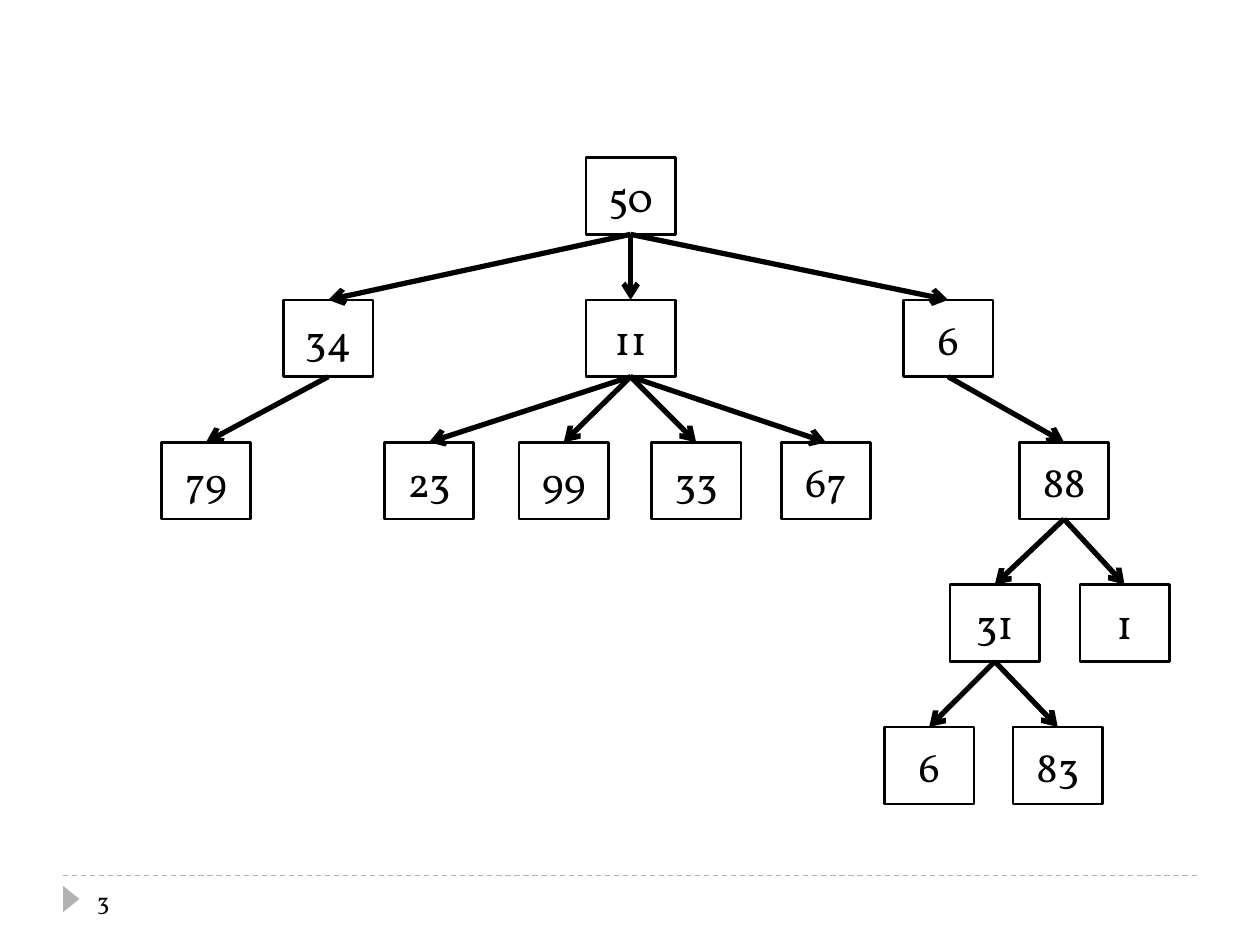
import pptx
import pptx.dml.color
import pptx.enum.dml
import pptx.enum.shapes
import pptx.enum.text
import pptx.oxml.ns
import pptx.util
import lxml.etree

Inches = pptx.util.Inches
SHAPE = pptx.enum.shapes.MSO_SHAPE
FONT = "Vollkorn"
BLACK, GREY = "000000", "B2B2B2"
WIDE, HIGH = 0.71, 0.61
TOP, STEP = 1.25, 1.13
BOTTOM_SITE, TOP_SITE = 2, 0

# Each node: label, left edge, children
TREE = ("50", 4.65, [
    ("34", 2.25, [("79", 1.28, [])]),
    ("11", 4.65, [
        ("23", 3.05, []),
        ("99", 4.12, []),
        ("33", 5.17, []),
        ("67", 6.2, []),
    ]),
    ("6", 7.17, [
        ("88", 8.09, [
            ("31", 7.54, [("6", 7.02, []), ("83", 8.04, [])]),
            ("1", 8.57, []),
        ]),
    ]),
])


def paint(color, code):
    color.rgb = pptx.dml.color.RGBColor.from_string(code)


def write(shape, text, size, align):
    frame = shape.text_frame
    frame.word_wrap = True
    frame.vertical_anchor = pptx.enum.text.MSO_ANCHOR.MIDDLE
    para = frame.paragraphs[0]
    para.alignment = align
    run = para.add_run()
    run.text = text
    run.font.name = FONT
    run.font.size = pptx.util.Pt(size)
    paint(run.font.color, BLACK)


def add_line(slide, start, end, code, width):
    line = slide.shapes.add_connector(
        pptx.enum.shapes.MSO_CONNECTOR.STRAIGHT,
        *(Inches(value) for value in start + end))
    paint(line.line.color, code)
    line.line.width = pptx.util.Pt(width)
    props = line._element.spPr
    lxml.etree.SubElement(props, pptx.oxml.ns.qn("a:effectLst"))
    return line


def add_box(slide, label, left, top):
    box = slide.shapes.add_shape(
        SHAPE.RECTANGLE, Inches(left), Inches(top), Inches(WIDE), Inches(HIGH))
    box.shadow.inherit = False
    box.fill.background()
    paint(box.line.color, BLACK)
    box.line.width = pptx.util.Pt(1.5)
    write(box, label, 24, pptx.enum.text.PP_ALIGN.CENTER)
    return box


def add_arrow(slide, parent, child):
    """Join the bottom of the parent box to the top of the child box."""
    arrow = add_line(slide, (0, 0), (1, 1), BLACK, 3)
    arrow.begin_connect(parent, BOTTOM_SITE)
    arrow.end_connect(child, TOP_SITE)
    stroke = arrow.line._get_or_add_ln()
    lxml.etree.SubElement(stroke, pptx.oxml.ns.qn("a:tailEnd"), type="arrow")


def add_tree(slide, node, level=0):
    """Draw a node and all below it, and return the node's box."""
    label, left, children = node
    box = add_box(slide, label, left, TOP + level * STEP)
    for child in children:
        add_arrow(slide, box, add_tree(slide, child, level + 1))
    return box


def add_footer(slide, number):
    rule = add_line(slide, (0.5, 6.95), (9.5, 6.95), GREY, 0.75)
    rule.line.dash_style = pptx.enum.dml.MSO_LINE.DASH
    mark = slide.shapes.add_shape(
        SHAPE.ISOSCELES_TRIANGLE,
        Inches(0.46), Inches(7.07), Inches(0.21), Inches(0.13))
    mark.rotation = 90
    mark.shadow.inherit = False
    mark.fill.solid()
    paint(mark.fill.fore_color, GREY)
    mark.line.fill.background()
    box = slide.shapes.add_textbox(
        Inches(0.67), Inches(6.95), Inches(2.17), Inches(0.4))
    write(box, number, 14, pptx.enum.text.PP_ALIGN.LEFT)


def main():
    deck = pptx.Presentation()
    deck.slide_width, deck.slide_height = Inches(10), Inches(7.5)
    slide = deck.slides.add_slide(deck.slide_layouts[6])
    add_footer(slide, "3")
    add_tree(slide, TREE)
    deck.save("out.pptx")


if __name__ == "__main__":
    main()
